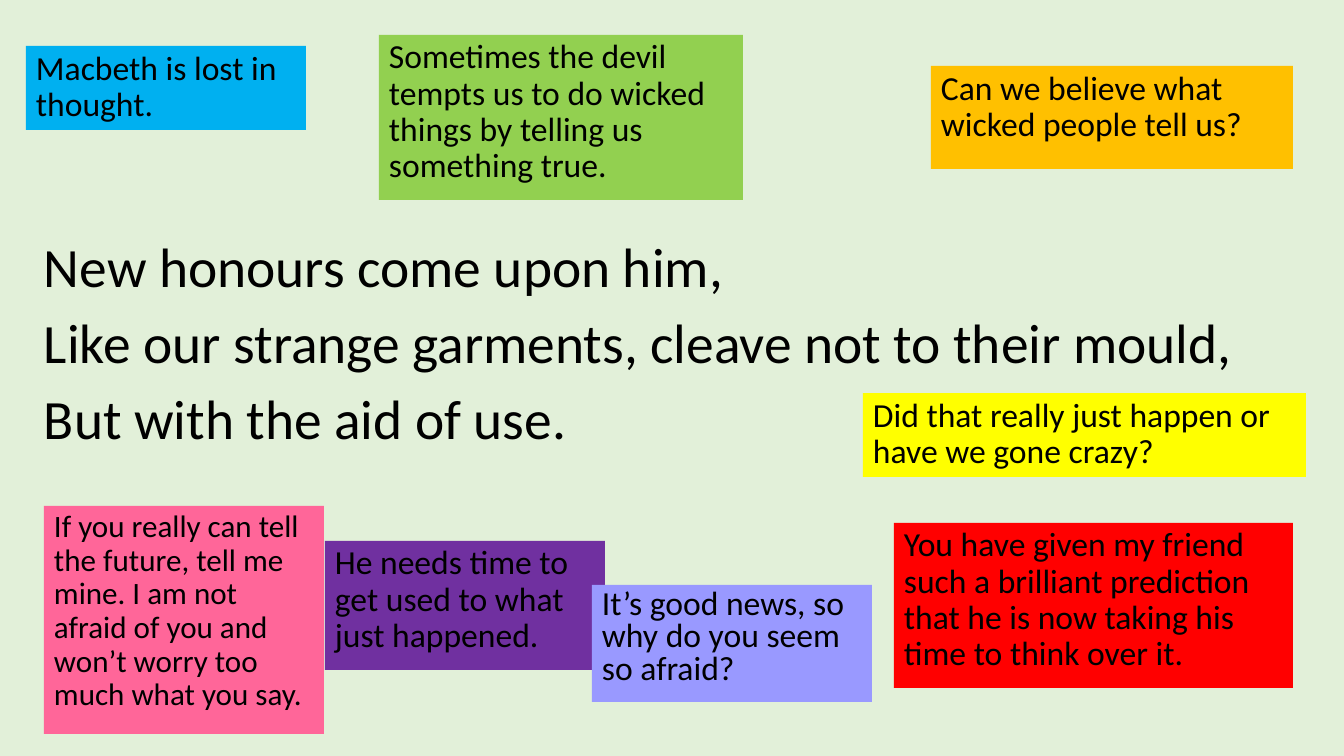
from pptx import Presentation
from pptx.dml.color import RGBColor
from pptx.enum.shapes import MSO_SHAPE
from pptx.enum.text import MSO_ANCHOR, PP_ALIGN
from pptx.util import Pt

COLOURS = {
    "background": "E2F0D9", "text": "000000", "red": "FF0000",
    "orange": "FFC000", "green": "92D050", "blue": "00B0F0",
    "purple": "7030A0", "pink": "FF6699", "lilac": "9999FF",
    "yellow": "FFFF00",
}
QUOTE = ("New honours come upon him,\n"
         "Like our strange garments, cleave not to their mould,\n"
         "But with the aid of use.")
QUOTE_BOX = (26, 228, 1225, 228)
NOTES = [
    ("You have given my friend such a brilliant prediction that he is now "
     "taking his time to think over it.", "red", (894, 523, 399, 165), {}),
    ("Can we believe what wicked people tell us?",
     "orange", (931, 66, 362, 103), {}),
    ("Sometimes the devil tempts us to do wicked things by telling us "
     "something true.", "green", (379, 35, 364, 165), {}),
    ("Macbeth is lost in thought.", "blue", (26, 46, 280, 84), {}),
    ("He needs time to get used to what just happened.",
     "purple", (325, 541, 280, 129), {}),
    ("If you really can tell the future, tell me mine. I am not afraid of "
     "you and won’t worry too much what you say.",
     "pink", (44, 506, 280, 228), {"size": 22.2}),
    ("It’s good news, so why do you seem so afraid?",
     "lilac", (592, 585, 280, 117), {"spacing": 0.8}),
    ("Did that really just happen or have we gone crazy?",
     "yellow", (863, 393, 443, 84), {}),
]

SLIDE_W, SLIDE_H = 1344, 756
EMU_PER_PX = 12192000 / SLIDE_W


def px(n):
    return round(n * EMU_PER_PX)


def colour(name):
    return RGBColor.from_string(COLOURS[name])


def write(sp, text, size=24, spacing=0.9, anchor=MSO_ANCHOR.TOP, left=10):
    tf = sp.text_frame
    tf.word_wrap = True
    tf.vertical_anchor = anchor
    tf.margin_left = px(left)
    p = tf.paragraphs[0]
    p.text = text
    p.alignment = PP_ALIGN.LEFT
    p.line_spacing = spacing
    for r in p.runs:
        r.font.name = "Calibri"
        r.font.size = Pt(size)
        r.font.color.rgb = colour("text")


prs = Presentation()
prs.slide_width, prs.slide_height = px(SLIDE_W), px(SLIDE_H)
s = prs.slides.add_slide(prs.slide_layouts[6])
s.background.fill.solid()
s.background.fill.fore_color.rgb = colour("background")

quote = s.shapes.add_textbox(*map(px, QUOTE_BOX))
write(quote, QUOTE, size=39.6, spacing=1.15, anchor=MSO_ANCHOR.BOTTOM, left=18)

for text, fill, box, style in NOTES:
    sp = s.shapes.add_shape(MSO_SHAPE.RECTANGLE, *map(px, box))
    sp.shadow.inherit = False
    sp.fill.solid()
    sp.fill.fore_color.rgb = colour(fill)
    sp.line.fill.background()
    write(sp, text, **style)

prs.save("out.pptx")
